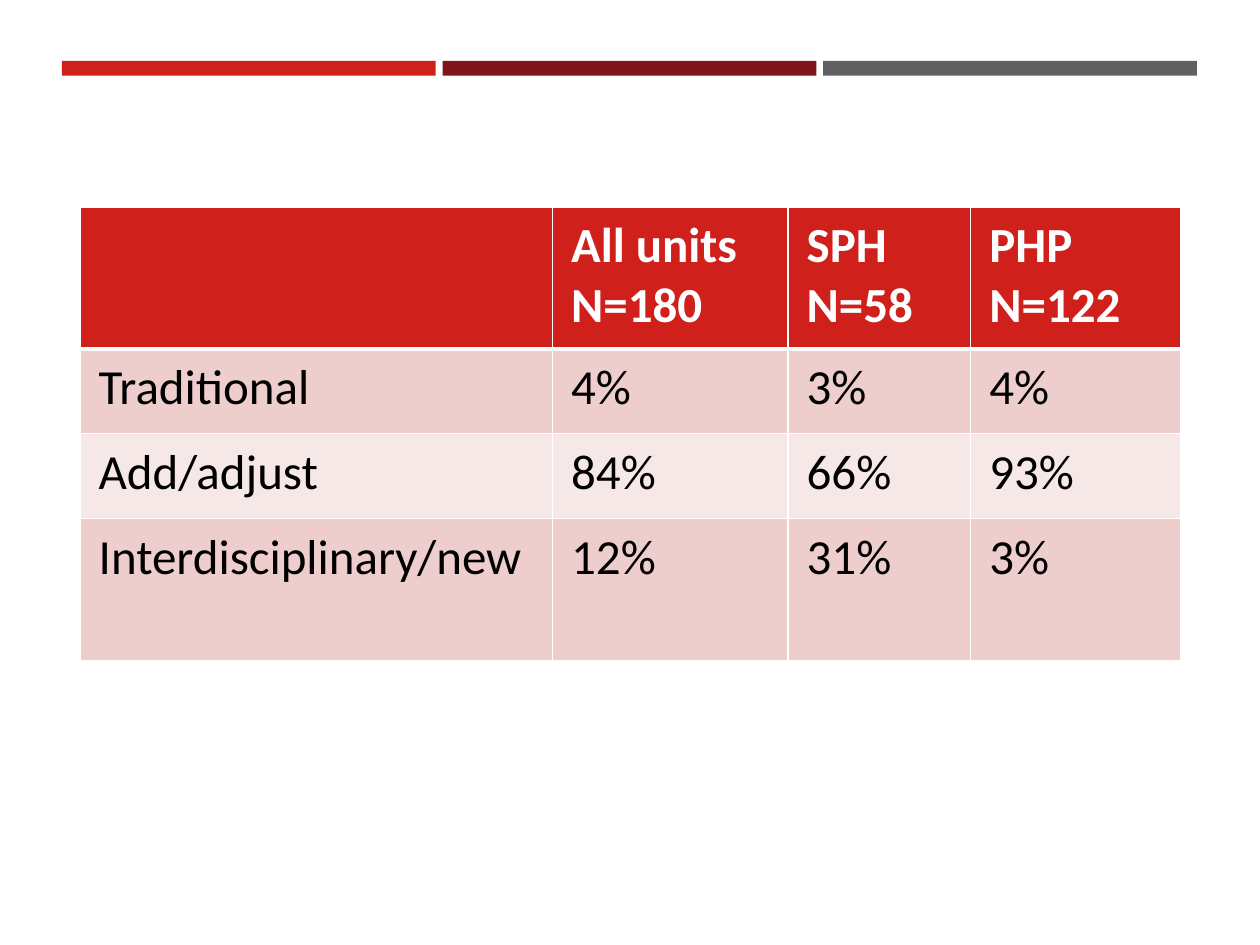
"""Build a slide with a three-colour top band and a table of shares by unit."""
import lxml.etree
import pptx
import pptx.dml.color
import pptx.enum.shapes
import pptx.oxml.ns
import pptx.util

Pt = pptx.util.Pt

COLOURS = {
    "red": "D0201C",
    "maroon": "811419",
    "grey": "5F6062",
    "rose": "EECDCD",
    "blush": "F7E8E8",
    "white": "FFFFFF",
    "black": "000000",
}
FONT = "Calibri"
COLUMN_WIDTHS = [270, 134.6, 104.4, 120.2]
ROW_HEIGHTS = [81.2, 48.4, 48.4, 81.2]
ROWS = [
    ["", "All units\nN=180", "SPH\nN=58", "PHP\nN=122"],
    ["Traditional", "4%", "3%", "4%"],
    ["Add/adjust", "84%", "66%", "93%"],
    ["Interdisciplinary/new", "12%", "31%", "3%"],
]


def rgb(name):
    return pptx.dml.color.RGBColor.from_string(COLOURS[name])


def add_bar(page, left, colour):
    bar = page.shapes.add_shape(
        pptx.enum.shapes.MSO_SHAPE.RECTANGLE, Pt(left), Pt(34.8), Pt(213.6), Pt(8.4)
    )
    bar.shadow.inherit = False
    bar.fill.solid()
    bar.fill.fore_color.rgb = rgb(colour)
    bar.line.fill.background()


def set_borders(cell, widths):
    qn = pptx.oxml.ns.qn
    properties = cell._tc.get_or_add_tcPr()
    for position, (side, width) in enumerate(widths.items()):
        line = lxml.etree.Element(qn(f"a:ln{side}"), w=str(Pt(width)))
        fill = lxml.etree.SubElement(line, qn("a:solidFill"))
        lxml.etree.SubElement(fill, qn("a:srgbClr"), val=COLOURS["white"])
        properties.insert(position, line)


def fill_cell(cell, text, fill, colour, bold):
    cell.fill.solid()
    cell.fill.fore_color.rgb = rgb(fill)
    cell.margin_left = cell.margin_right = Pt(10.8)
    cell.margin_top = cell.margin_bottom = Pt(5.4)
    frame = cell.text_frame
    for number, words in enumerate(text.split("\n") if text else []):
        para = frame.add_paragraph() if number else frame.paragraphs[0]
        span = para.add_run()
        span.text = words
        span.font.name = FONT
        span.font.size = Pt(28)
        span.font.bold = bold
        span.font.color.rgb = rgb(colour)


def add_share_table(page):
    frame = page.shapes.add_table(
        len(ROWS), len(COLUMN_WIDTHS), Pt(45.6), Pt(118.2),
        Pt(sum(COLUMN_WIDTHS)), Pt(sum(ROW_HEIGHTS)),
    )
    table = frame.table
    for column, width in zip(table.columns, COLUMN_WIDTHS):
        column.width = Pt(width)
    for index, (row, height, texts) in enumerate(zip(table.rows, ROW_HEIGHTS, ROWS)):
        row.height = Pt(height)
        header = index == 0
        fill = "red" if header else ("rose" if index % 2 else "blush")
        borders = {"L": 1, "R": 1, "T": 3 if index == 1 else 1, "B": 3 if header else 1}
        for cell, text in zip(row.cells, texts):
            fill_cell(cell, text, fill, "white" if header else "black", header)
            set_borders(cell, borders)


def main():
    deck = pptx.Presentation()
    deck.slide_width, deck.slide_height = Pt(720), Pt(540)
    page = deck.slides.add_slide(deck.slide_layouts[6])
    for index, colour in enumerate(["red", "maroon", "grey"]):
        add_bar(page, 35.4 + index * 217.5, colour)
    add_share_table(page)
    deck.save("out.pptx")


if __name__ == "__main__":
    main()
